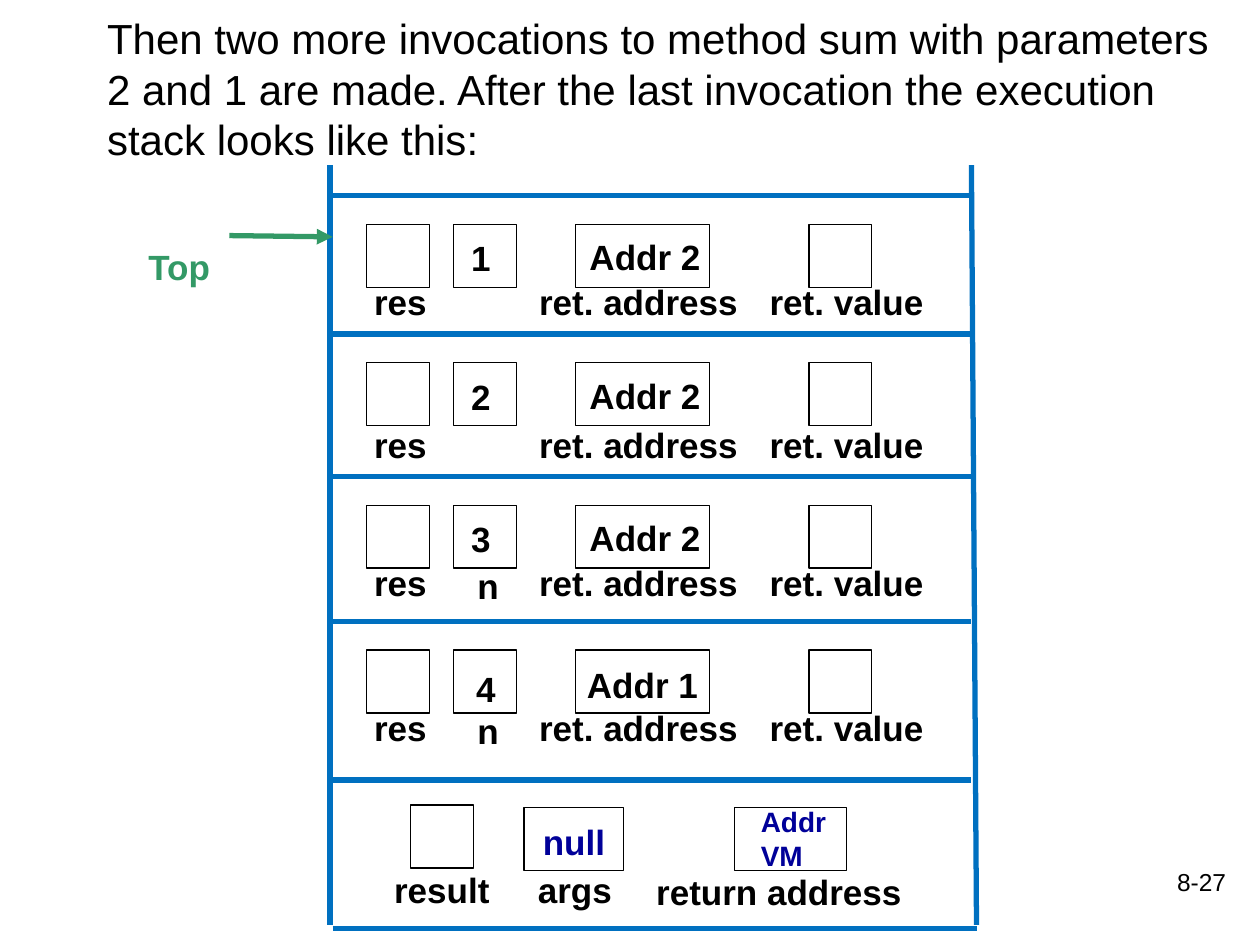
from dataclasses import dataclass

from lxml import etree
from pptx import Presentation
from pptx import util as u
from pptx.dml.color import RGBColor
from pptx.enum import shapes, text
from pptx.oxml.ns import qn


@dataclass(frozen=True)
class Theme:
    font: str = "Arial"
    ink: str = "000000"
    stack: str = "0070C0"
    pointer: str = "339966"
    initial: str = "000099"
    intro_size: int = 24
    label_size: int = 20
    small_size: int = 16
    number_size: int = 14
    thin: float = 0.75
    thick: float = 3


class StackSlide:
    def __init__(self, deck, theme):
        self.theme = theme
        self.slide = deck.slides.add_slide(deck.slide_layouts[1])

    def format_text(self, paragraph, size, color, bold):
        values = {"name": self.theme.font, "size": u.Pt(size), "bold": bold}
        for key, value in values.items():
            setattr(paragraph.font, key, value)
        paragraph.font.color.rgb = RGBColor.from_string(color)

    def intro(self, words, left, top, width, height):
        """Use the body placeholder without bullet; drop the unused title."""
        title = self.slide.shapes.title
        title.element.getparent().remove(title.element)
        body = self.slide.placeholders[1]
        place = {"left": left, "top": top, "width": width, "height": height}
        for key, value in place.items():
            setattr(body, key, u.Inches(value))
        body.text_frame.text = words
        body.text_frame.auto_size = text.MSO_AUTO_SIZE.NONE
        paragraph = body.text_frame.paragraphs[0]
        self.format_text(paragraph, self.theme.intro_size, self.theme.ink, False)
        properties = paragraph._p.get_or_add_pPr()
        for key in ("marL", "indent"):
            properties.set(key, "0")
        before = etree.Element(qn("a:spcBef"))
        etree.SubElement(before, qn("a:spcPct")).set("val", "20000")
        properties.insert(0, before)
        before.addnext(etree.Element(qn("a:buNone")))

    def label(self, words, left, top, width, height=0.44, size=None, color=None,
              bold=True, wrap=False, align=text.PP_ALIGN.LEFT):
        box = self.slide.shapes.add_textbox(*map(u.Inches, (left, top, width, height)))
        frame = box.text_frame
        frame.text = words
        frame.word_wrap = wrap
        for paragraph in frame.paragraphs:
            paragraph.alignment = align
            self.format_text(paragraph, size or self.theme.label_size,
                             color or self.theme.ink, bold)

    def cell(self, left, top, width=0.5, height=0.5):
        box = self.slide.shapes.add_shape(
            shapes.MSO_SHAPE.RECTANGLE, *map(u.Inches, (left, top, width, height)))
        box.shadow.inherit = False
        box.fill.background()
        box.line.color.rgb = RGBColor.from_string(self.theme.ink)
        box.line.width = u.Pt(self.theme.thin)

    def line(self, start, end, color=None, arrow=False):
        rule = self.slide.shapes.add_connector(
            shapes.MSO_CONNECTOR.STRAIGHT, *map(u.Inches, (*start, *end)))
        rule.line.color.rgb = RGBColor.from_string(color or self.theme.stack)
        rule.line.width = u.Pt(self.theme.thick)
        if arrow:
            etree.SubElement(rule.line._get_or_add_ln(), qn("a:tailEnd")).set("type", "triangle")
        etree.SubElement(rule._element.spPr, qn("a:effectLst"))

    def sum_frame(self, top, argument, address, caption_top, named=False, shift=(0, 0)):
        """Draw one invocation of sum; shift moves the argument and address text."""
        self.line((2.64, top), (7.71, top))
        cell_top = top + 0.23
        for left, width in ((2.91, 0.5), (3.6, 0.5), (4.57, 1.06), (6.42, 0.5)):
            self.cell(left, cell_top, width)
        self.label(argument, 3.64 + shift[0], cell_top + 0.05 + shift[1], 0.36)
        self.label(address, 4.58 - shift[0] / 2, cell_top + 0.04 + shift[1] / 2, 1.09)
        for caption, left, width in (("res", 2.87, 0.62), ("ret. address", 4.18, 1.79),
                                     ("ret. value", 6.01, 1.43)):
            self.label(caption, left, caption_top, width)
        if named:
            self.label("n", 3.69, caption_top + 0.02, 0.37)

    def main_frame(self, top):
        self.line((2.64, top), (7.71, top))
        for left, cell_top, width in ((3.26, 6.39, 0.5), (4.16, 6.41, 0.79),
                                      (5.83, 6.41, 0.89)):
            self.cell(left, cell_top, width)
        self.label("null", 4.21, 6.46, 0.7, color=self.theme.initial)
        self.label("Addr\nVM", 5.94, 6.34, 0.72, 0.64, self.theme.small_size,
                   self.theme.initial)
        self.label("result", 3.03, 6.84, 0.96)
        self.label("args", 4.17, 6.84, 0.79)
        self.label("return address", 5.11, 6.86, 2.33, wrap=True)


def main():
    deck = Presentation()
    deck.slide_width, deck.slide_height = u.Inches(10), u.Inches(7.5)
    theme = Theme()
    page = StackSlide(deck, theme)

    page.intro("Then two more invocations to method sum with parameters 2 and 1 are made. "
               "After the last invocation the execution stack looks like this:",
               0.75, 0.05, 9.08, 1.26)
    page.label("8-27", 7.75, 6.83, 2.08, 0.5, theme.number_size, bold=False,
               wrap=True, align=text.PP_ALIGN.RIGHT)

    for start, end in (((2.62, 1.31), (2.62, 7.34)), ((2.64, 7.37), (7.75, 7.37)),
                       ((7.75, 7.34), (7.71, 1.31))):
        page.line(start, end)

    page.main_frame(6.19)
    page.sum_frame(4.93, "4", "Addr 1", 5.56, named=True, shift=(0.04, 0.04))
    page.sum_frame(3.78, "3", "Addr 2", 4.41, named=True)
    page.sum_frame(2.65, "2", "Addr 2", 3.31)
    page.sum_frame(1.55, "1", "Addr 2", 2.18)

    page.label("Top", 1.08, 1.9, 0.7, color=theme.pointer)
    page.line((1.82, 1.87), (2.64, 1.88), theme.pointer, arrow=True)
    deck.save("out.pptx")


if __name__ == "__main__":
    main()
